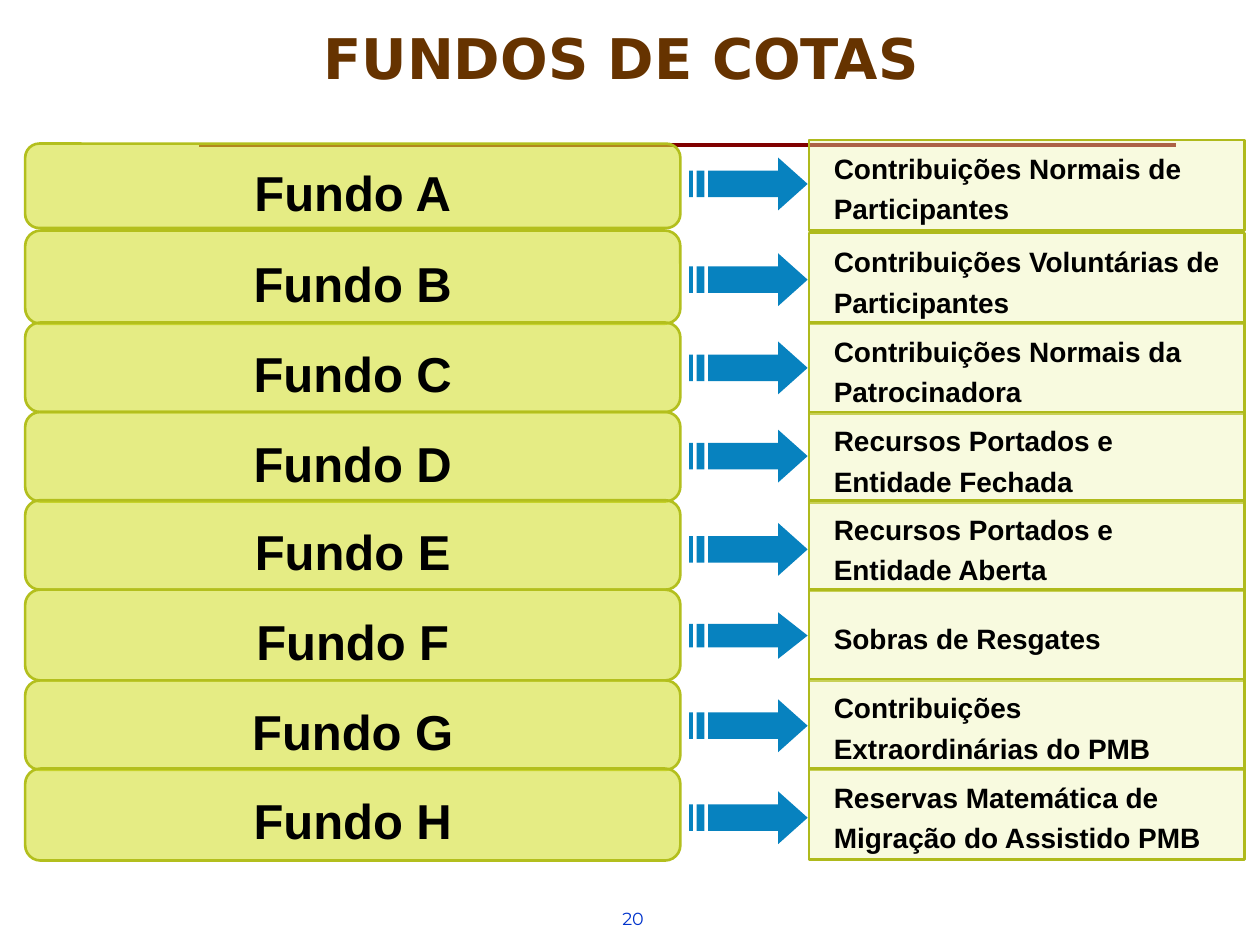
from lxml import etree
from pptx import Presentation
from pptx.dml.color import RGBColor
from pptx.enum.shapes import MSO_CONNECTOR, MSO_SHAPE
from pptx.enum.text import MSO_ANCHOR, MSO_AUTO_SIZE, PP_ALIGN
from pptx.oxml.ns import qn
from pptx.util import Inches, Pt

ROUNDED = MSO_SHAPE.FLOWCHART_ALTERNATE_PROCESS
RECTANGLE = MSO_SHAPE.RECTANGLE
STRAIGHT = MSO_CONNECTOR.STRAIGHT
LEFT, CENTER = PP_ALIGN.LEFT, PP_ALIGN.CENTER
TOP, MIDDLE, BOTTOM = MSO_ANCHOR.TOP, MSO_ANCHOR.MIDDLE, MSO_ANCHOR.BOTTOM

COLORS = {
    "title": "663300",
    "rule": "800000",
    "number": "0033CC",
    "text": "000000",
    "fund": "D4E033",
    "fund_line": "B3BF1D",
    "source": "EEF3AF",
    "source_line": "AFBA1C",
    "arrow": "0782BF",
}

# Fund letter, fund top and height, arrow top and height, source top, source
ROWS = [
    ("A", 1.14, 0.67, 1.25, 0.42, 1.11, "Contribuições Normais de Participantes"),
    ("B", 1.83, 0.74, 2.01, 0.42, 1.85, "Contribuições Voluntárias de Participantes"),
    ("C", 2.56, 0.71, 2.71, 0.42, 2.56, "Contribuições Normais da Patrocinadora"),
    ("D", 3.27, 0.71, 3.41, 0.42, 3.27, "Recursos Portados e Entidade Fechada"),
    ("E", 3.97, 0.71, 4.15, 0.42, 3.97, "Recursos Portados e Entidade Aberta"),
    ("F", 4.68, 0.72, 4.86, 0.37, 4.68, "Sobras de Resgates"),
    ("G", 5.40, 0.71, 5.55, 0.42, 5.39, "Contribuições Extraordinárias do PMB"),
    ("H", 6.10, 0.73, 6.28, 0.42, 6.10,
     "Reservas Matemática de Migração do Assistido PMB"),
]
ARROW_LEFT, ARROW_WIDTH = 5.47, 0.94


def rgb(name):
    return RGBColor.from_string(COLORS[name])


def write(box, text, size, font="Arial", color="text", bold=True, align=LEFT,
          anchor=MIDDLE, spacing=None, margin=0):
    frame = box.text_frame
    frame.word_wrap = True
    frame.auto_size = MSO_AUTO_SIZE.NONE
    frame.vertical_anchor = anchor
    para = frame.paragraphs[0]
    para.alignment = align
    if spacing:
        para.line_spacing = spacing
    if margin:
        properties = para._p.get_or_add_pPr()
        properties.set("marL", str(Inches(margin)))
        properties.set("indent", "0")
    span = para.add_run()
    span.text = text
    span.font.name = font
    span.font.size = Pt(size)
    span.font.bold = bold
    span.font.color.rgb = rgb(color)


def add_panel(page, kind, left, top, width, height, fill, line, opacity):
    panel = page.shapes.add_shape(
        kind, Inches(left), Inches(top), Inches(width), Inches(height))
    panel.shadow.inherit = False
    panel.fill.solid()
    panel.fill.fore_color.rgb = rgb(fill)
    color = panel.fill._xPr.find(qn("a:solidFill"))[0]
    etree.SubElement(color, qn("a:alpha")).set("val", str(opacity * 1000))
    panel.line.color.rgb = rgb(line)
    panel.line.width = Pt(1.5)
    return panel


def add_striped_arrow(page, left, top, width, height):
    right, bottom, middle = left + width, top + height, top + height / 2
    upper, lower = top + height / 4, bottom - height / 4
    neck, shaft = left + width * 0.75, left + 0.15
    outlines = [[(neck, top), (neck, upper), (shaft, upper), (shaft, lower),
                 (neck, lower), (neck, bottom), (right, middle)]]
    for start, end in ((0.06, 0.12), (0, 0.03)):
        outlines.append([(left + start, upper), (left + start, lower),
                         (left + end, lower), (left + end, upper)])
    builder = None
    for outline in outlines:
        first, *others = [(Inches(x), Inches(y)) for x, y in outline]
        if builder is None:
            builder = page.shapes.build_freeform(*first)
        else:
            builder.move_to(*first)
        builder.add_line_segments(others, close=True)
    arrow = builder.convert_to_shape()
    arrow.shadow.inherit = False
    arrow.fill.solid()
    arrow.fill.fore_color.rgb = rgb("arrow")
    arrow.line.fill.background()


def add_rule(page, left, right, top):
    rule = page.shapes.add_connector(
        STRAIGHT, Inches(left), Inches(top), Inches(right), Inches(top))
    rule.line.color.rgb = rgb("rule")
    rule.line.width = Pt(2)
    etree.SubElement(rule._element.spPr, qn("a:effectLst"))


def add_title(page, text):
    title = page.shapes.title
    title.left, title.top = Inches(0.28), Inches(-0.03)
    title.width, title.height = Inches(9.3), Inches(0.75)
    frame = title.text_frame
    frame.margin_left = frame.margin_right = 0
    frame.margin_top = frame.margin_bottom = 0
    write(title, text, 32, font="DejaVu Sans", color="title", align=CENTER,
          anchor=BOTTOM, spacing=0.8)


def add_page_number(page, text):
    box = page.shapes.add_textbox(
        Inches(4.84), Inches(7.16), Inches(0.71), Inches(0.34))
    write(box, text, 10, font="Montserrat", color="number", bold=False, anchor=TOP)


def main():
    deck = Presentation()
    deck.slide_width, deck.slide_height = Inches(10), Inches(7.5)
    page = deck.slides.add_slide(deck.slide_layouts[5])

    # Heading, rule and page number
    add_rule(page, 1.58, 9.33, 1.15)
    add_page_number(page, "20")
    add_title(page, "FUNDOS DE COTAS")

    # Each fund, with an arrow to where its money comes from
    for letter, top, height, arrow_top, arrow_height, source_top, source in ROWS:
        fund = add_panel(page, ROUNDED, 0.2, top, 5.2, height,
                         "fund", "fund_line", 60)
        write(fund, f"Fundo {letter}", 28, align=CENTER, spacing=1.2)
        add_striped_arrow(page, ARROW_LEFT, arrow_top, ARROW_WIDTH, arrow_height)
        origin = add_panel(page, RECTANGLE, 6.42, source_top, 3.46, 0.72,
                           "source", "source_line", 40)
        write(origin, source, 16, spacing=1.2, margin=0.1)

    deck.save("out.pptx")


if __name__ == "__main__":
    main()
